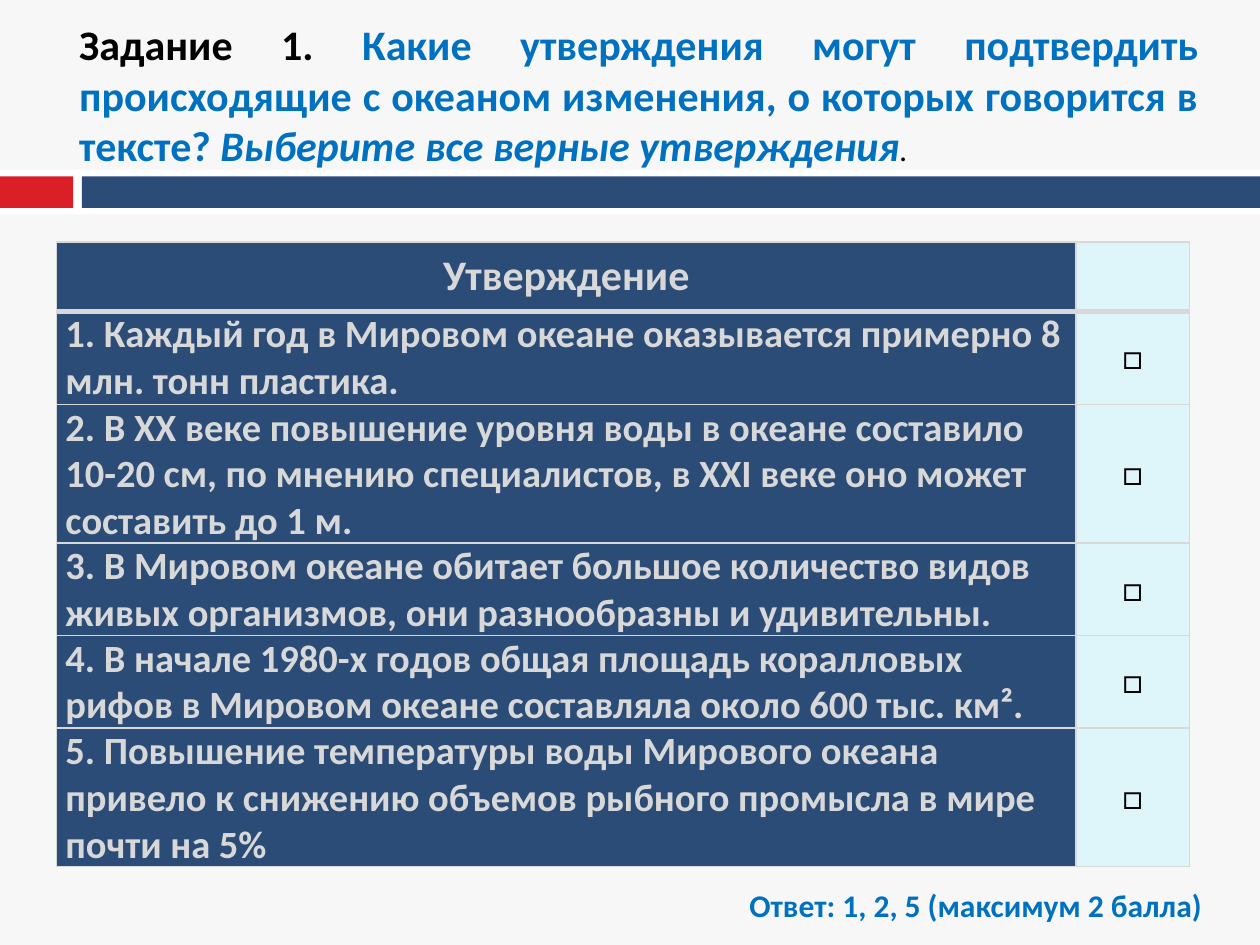
from lxml import etree
from pptx import Presentation, util as u
from pptx.dml.color import RGBColor
from pptx.enum import shapes, text
from pptx.oxml.ns import qn

BLACK = RGBColor(0x00, 0x00, 0x00)
WHITE = RGBColor(0xFF, 0xFF, 0xFF)
PAPER = RGBColor(0xF7, 0xF7, 0xF7)
RED = RGBColor(0xDA, 0x1F, 0x28)
NAVY = RGBColor(0x2B, 0x4C, 0x77)
BLUE = RGBColor(0x00, 0x70, 0xC0)
GREY = RGBColor(0xD8, 0xD8, 0xD8)
PALE = RGBColor(0xDE, 0xF5, 0xFA)

TASK = [
    ("Задание 1. ", BLACK, {"size": u.Pt(24), "bold": True}),
    ("Какие утверждения могут подтвердить происходящие с океаном изменения, "
     "о которых говорится в тексте? ", BLUE, {"size": u.Pt(24), "bold": True}),
    ("Выберите все верные утверждения", BLUE,
     {"size": u.Pt(24), "bold": True, "italic": True}),
    (".", BLACK, {"size": u.Pt(18), "italic": True}),
]
ANSWER = [("Ответ: 1, 2, 5 (максимум 2 балла)", BLUE, {"size": u.Pt(18), "bold": True})]

HEADING = "Утверждение"
STATEMENTS = [  # wording, row height
    ("1. Каждый год в Мировом океане оказывается примерно 8 млн. тонн пластика.", 0.74),
    ("2. В ХХ веке повышение уровня воды в океане составило 10-20 см, по мнению "
     "специалистов, в XXI веке оно может составить до 1 м.", 1.1),
    ("3. В Мировом океане обитает большое количество видов живых организмов, "
     "они разнообразны и удивительны.", 0.73),
    ("4. В начале 1980-х годов общая площадь коралловых рифов в Мировом океане "
     "составляла около 600 тыс. км².", 0.73),
    ("5. Повышение температуры воды Мирового океана привело к снижению объемов "
     "рыбного промысла в мире почти на 5%", 1.1),
]
CHECKBOX = "□"
HEADING_HEIGHT = 0.55
COLUMNS = [8.09, 0.9]

BANDS = [  # left, top, width, height, colour
    (0, 1.35, 10, 0.35, WHITE),
    (0, 1.4, 0.58, 0.25, RED),
    (0.65, 1.4, 9.35, 0.25, NAVY),
]


def write(para, spans, align):
    para.alignment = align
    for wording, colour, look in spans:
        span = para.add_run()
        span.text = wording
        span.font.name = "Calibri"
        span.font.color.rgb = colour
        for name, value in look.items():
            setattr(span.font, name, value)


def add_text(page, place, spans, align, wrap):
    frame = page.shapes.add_textbox(*map(u.Inches, place)).text_frame
    frame.word_wrap = wrap
    frame.auto_size = text.MSO_AUTO_SIZE.SHAPE_TO_FIT_TEXT
    write(frame.paragraphs[0], spans, align)


def add_borders(cell, widths):
    """Draw the cell's sides; widths maps L, R, T, B to points."""
    properties = cell._tc.get_or_add_tcPr()
    for side, points in widths.items():
        line = etree.SubElement(properties, qn(f"a:ln{side}"), w=str(u.Pt(points)))
        fill = etree.SubElement(line, qn("a:solidFill"))
        etree.SubElement(fill, qn("a:srgbClr"), val=str(GREY))


def add_statements(page):
    heights = [HEADING_HEIGHT] + [height for _, height in STATEMENTS]
    place = (0.45, 1.92, sum(COLUMNS), sum(heights))
    table = page.shapes.add_table(len(heights), len(COLUMNS), *map(u.Inches, place)).table
    for column, width in zip(table.columns, COLUMNS):
        column.width = u.Inches(width)
    for row, height in zip(table.rows, heights):
        row.height = u.Inches(height)

    rows = [(HEADING, "")] + [(wording, CHECKBOX) for wording, _ in STATEMENTS]
    for r, wordings in enumerate(rows):
        for c, wording in enumerate(wordings):
            cell = table.cell(r, c)
            add_borders(cell, {"L": 1, "R": 1, "T": 3 if r == 1 else 1,
                               "B": 3 if r == 0 else 1})
            cell.fill.solid()
            cell.fill.fore_color.rgb = PALE if c else NAVY
            cell.vertical_anchor = text.MSO_ANCHOR.MIDDLE
            cell.margin_left = cell.margin_right = u.Inches(0.07)
            cell.margin_top = cell.margin_bottom = 0
            if not wording:
                continue
            size = 20 if c else 22 if r else 24
            look = {"size": u.Pt(size), "bold": c == 0}
            align = text.PP_ALIGN.LEFT if r and not c else text.PP_ALIGN.CENTER
            write(cell.text_frame.paragraphs[0],
                  [(wording, BLACK if c else GREY, look)], align)


def main():
    deck = Presentation()
    deck.slide_width, deck.slide_height = u.Inches(10), u.Inches(7.5)
    page = deck.slides.add_slide(deck.slide_layouts[6])
    page.background.fill.solid()
    page.background.fill.fore_color.rgb = PAPER

    for *place, colour in BANDS:
        band = page.shapes.add_shape(shapes.MSO_SHAPE.RECTANGLE, *map(u.Inches, place))
        band.shadow.inherit = False
        band.fill.solid()
        band.fill.fore_color.rgb = colour
        band.line.fill.background()

    add_text(page, (0.53, 0.1, 9.08, 1.31), TASK, text.PP_ALIGN.JUSTIFY, True)
    add_statements(page)
    add_text(page, (5.85, 6.98, 3.83, 0.4), ANSWER, text.PP_ALIGN.LEFT, False)
    deck.save("out.pptx")


if __name__ == "__main__":
    main()
